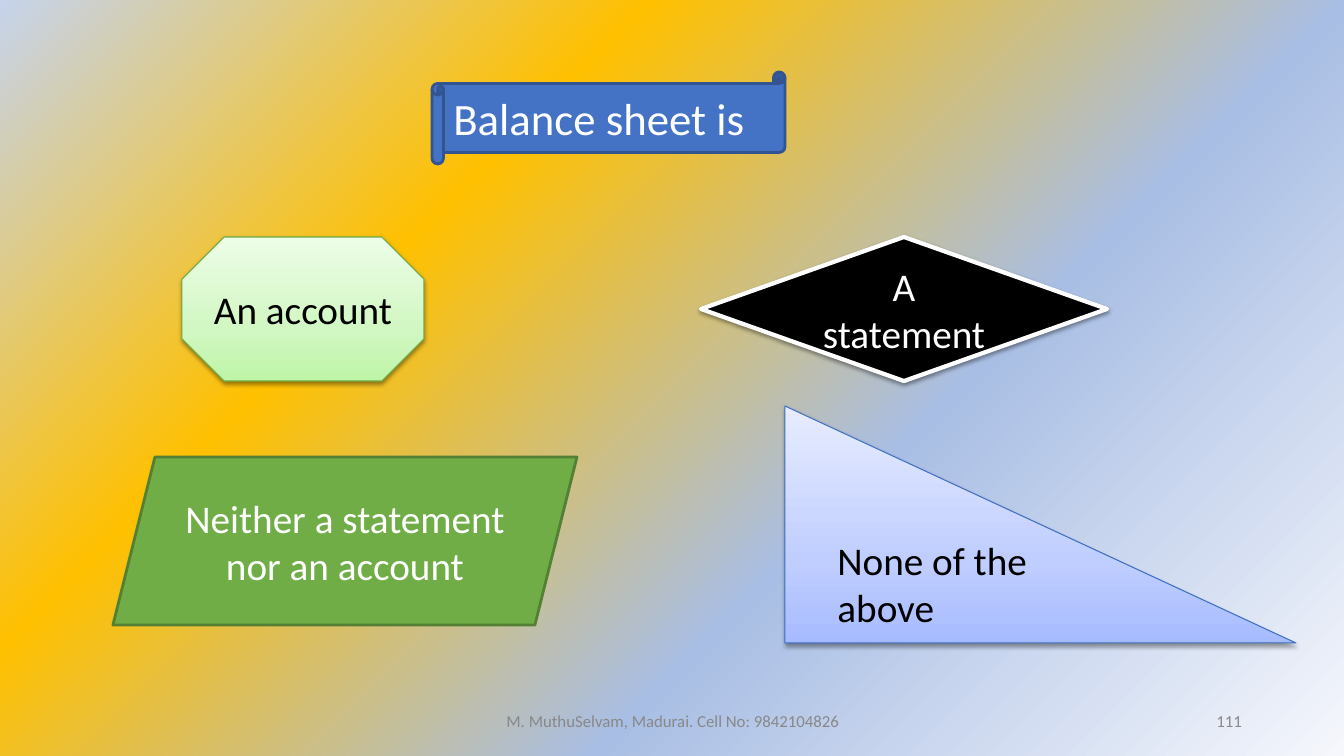
"""Build a quiz slide that asks what a balance sheet is."""
from pptx import Presentation
from pptx.dml.color import RGBColor
from pptx.enum.shapes import MSO_SHAPE as SHAPE
from pptx.enum.text import MSO_ANCHOR, PP_ALIGN
from pptx.oxml import parse_xml
from pptx.oxml.ns import nsdecls, qn
from pptx.util import Pt

PX = 914400 / 100.8
LEFT, MID, RIGHT = PP_ALIGN.LEFT, PP_ALIGN.CENTER, PP_ALIGN.RIGHT

BACK = [(0, "F5F7FC"), (36, "A9BEE4"), (69, "FFC000"), (100, "C5D3ED")]
CORNER = '<a:path path="circle"><a:fillToRect l="100000" t="100000"/></a:path>'
UPWARD = '<a:lin ang="16200000" scaled="0"/>'
GREEN = [(0, "BEF5A7"), (35, "D1F7C2"), (100, "EDFDE7")]
BLUE = [(0, "A6BBFF"), (35, "C0CEFF"), (100, "E7ECFF")]

# kind, box, fill, line, line width, shadow, text, size, colour, align
CARDS = [
    (SHAPE.HORIZONTAL_SCROLL, (432, 72, 353, 92), "4472C4", "325491", 2, False,
     "Balance sheet is", 32, "FFFFFF", LEFT),
    (SHAPE.OCTAGON, (182, 237, 242, 144), GREEN, "6DAC43", 0.75, True,
     "An account", 28, "000000", MID),
    (SHAPE.DIAMOND, (701, 237, 406, 144), "000000", "FFFFFF", 3, True,
     "A statement", 28, "FFFFFF", MID),
    (SHAPE.RIGHT_TRIANGLE, (785, 406, 511, 237), BLUE, "3F6FC3", 0.75, True,
     "None of the above", 28, "000000", LEFT),
    (SHAPE.PARALLELOGRAM, (113, 457, 464, 168), "70AD47", "538035", 2, False,
     "Neither a statement nor an account", 28, "FFFFFF", MID),
]
NOTES = [
    ((446, 701, 454, 40), "M. MuthuSelvam, Madurai. Cell No: 9842104826", MID),
    ((950, 701, 302, 40), "111", RIGHT),
]


def px(*sizes):
    return [round(size * PX) for size in sizes]


def hue(code):
    return RGBColor.from_string(code)


def blend(fill, root, stops, tail):
    fill.gradient()
    old = next(root.iter(qn("a:gradFill")))
    marks = "".join(f'<a:gs pos="{at * 1000}"><a:srgbClr val="{code}"/></a:gs>'
                    for at, code in stops)
    new = parse_xml(f'<a:gradFill {nsdecls("a")} rotWithShape="1">'
                    f'<a:gsLst>{marks}</a:gsLst>{tail}</a:gradFill>')
    old.getparent().replace(old, new)


def shade(shape):
    glow = parse_xml(
        f'<a:outerShdw {nsdecls("a")} blurRad="{Pt(3.1)}" dist="{Pt(1.6)}" '
        'dir="5400000" rotWithShape="0"><a:srgbClr val="000000">'
        '<a:alpha val="38000"/></a:srgbClr></a:outerShdw>')
    next(shape.element.iter(qn("a:effectLst"))).append(glow)


def write(shape, text, size, code, align):
    frame = shape.text_frame
    frame.word_wrap = True
    frame.vertical_anchor = MSO_ANCHOR.MIDDLE
    para = frame.paragraphs[0]
    para.alignment = align
    run = para.add_run()
    run.text = text
    run.font.name = "Calibri"
    run.font.size = Pt(size)
    run.font.color.rgb = hue(code)


def card(slide, kind, box, fill, line, width, cast, *words):
    shape = slide.shapes.add_shape(kind, *px(*box))
    shape.shadow.inherit = False
    if isinstance(fill, str):
        shape.fill.solid()
        shape.fill.fore_color.rgb = hue(fill)
    else:
        blend(shape.fill, shape.element, fill, UPWARD)
    shape.line.color.rgb = hue(line)
    shape.line.width = Pt(width)
    if cast:
        shade(shape)
    write(shape, *words)


def main():
    deck = Presentation()
    deck.slide_width, deck.slide_height = px(1344, 756)
    slide = deck.slides.add_slide(deck.slide_layouts[6])
    blend(slide.background.fill, slide.element, BACK, CORNER)
    for item in CARDS:
        card(slide, *item)
    for box, text, align in NOTES:
        write(slide.shapes.add_textbox(*px(*box)), text, 12, "888888", align)
    deck.save("out.pptx")


if __name__ == "__main__":
    main()
